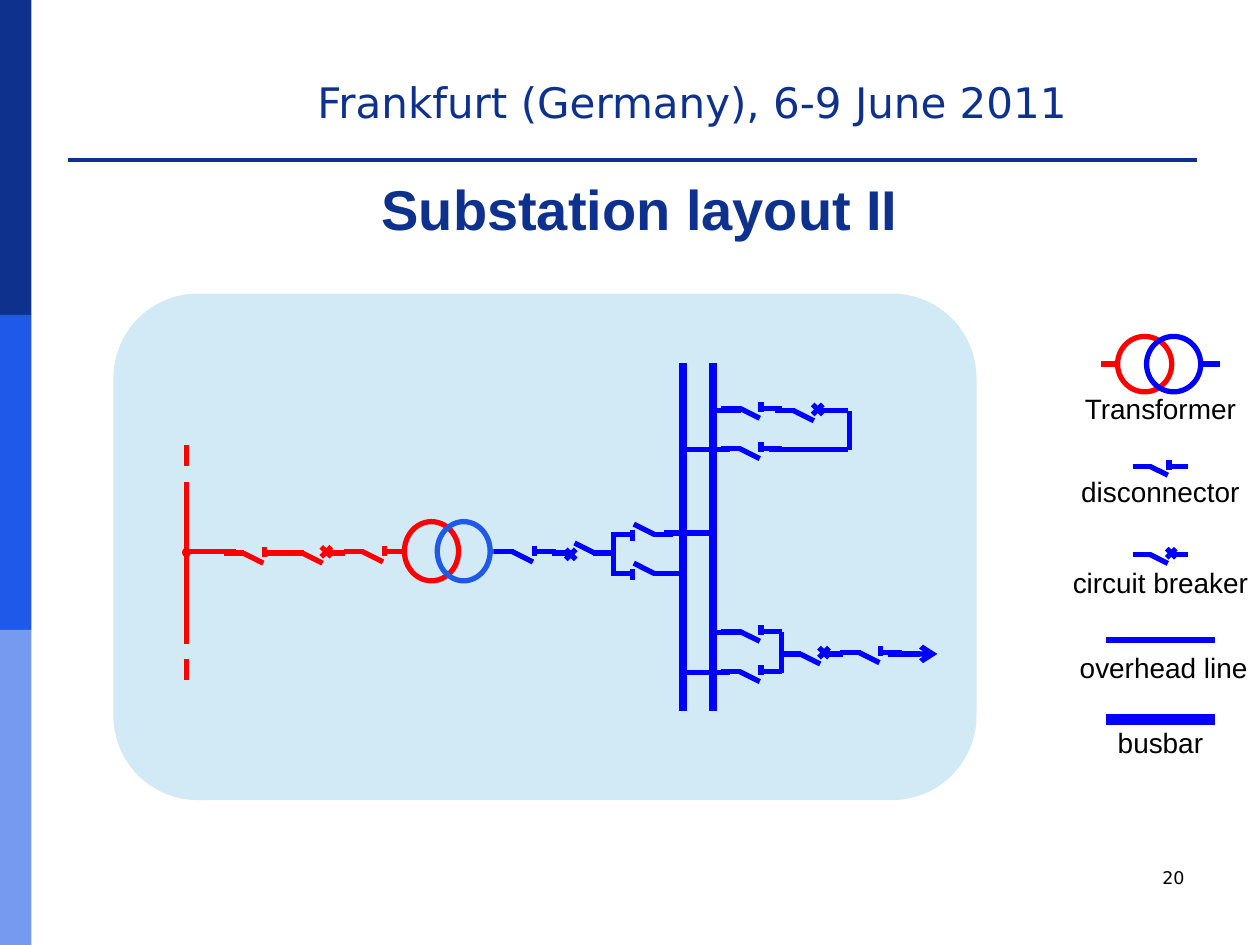
"""Build the substation layout slide with its single-line diagram and legend."""
from dataclasses import dataclass
from typing import NamedTuple

from lxml import etree
from pptx import Presentation
from pptx.dml.color import RGBColor
from pptx.enum.dml import MSO_LINE
from pptx.enum.shapes import MSO_CONNECTOR, MSO_SHAPE
from pptx.enum.text import MSO_AUTO_SIZE, PP_ALIGN
from pptx.oxml.ns import qn
from pptx.util import Inches, Pt

STRAIGHT, DASH, FIT_SHAPE = MSO_CONNECTOR.STRAIGHT, MSO_LINE.DASH, MSO_AUTO_SIZE.SHAPE_TO_FIT_TEXT
RECTANGLE, ROUNDED, OVAL = MSO_SHAPE.RECTANGLE, MSO_SHAPE.ROUNDED_RECTANGLE, MSO_SHAPE.OVAL
LEFT, CENTER, RIGHT = PP_ALIGN.LEFT, PP_ALIGN.CENTER, PP_ALIGN.RIGHT


@dataclass(frozen=True)
class Theme:
    navy: str = "0E318D"
    royal: str = "1F59E9"
    sky: str = "779AF1"
    deep: str = "154BD1"
    panel: str = "B4DCF0"
    high: str = "FF0000"
    low: str = "0000FF"
    ink: str = "000000"
    body_font: str = "Arial"
    header_font: str = "DejaVu Sans"
    title_size: int = 32
    header_size: int = 24
    label_size: int = 16
    number_size: int = 10
    wire: float = 3
    busbar: float = 4.5


THEME = Theme()


class Wire(NamedTuple):
    x1: float
    y1: float
    x2: float
    y2: float
    color: str = THEME.low
    width: float = THEME.wire
    dashed: bool = False
    arrow: bool = False


class Switch(NamedTuple):
    x: float
    y: float
    breaker: bool = False
    color: str = THEME.low
    scale: float = 1


class Ring(NamedTuple):
    left: float
    top: float
    width: float
    height: float
    color: str
    line_width: float = THEME.wire
    fill: str = ""


class Label(NamedTuple):
    text: str
    left: float
    top: float
    width: float
    height: float = 0.27
    size: int = THEME.label_size
    font: str = THEME.body_font
    color: str = THEME.ink
    align: PP_ALIGN = CENTER
    margin: float = 0


BUSBARS = [Wire(x, 5.64, x, 2.88, width=THEME.busbar) for x in (5.42, 5.66)]
OVERHEAD_LINE = [
    Wire(1.48, 5.01, 1.48, 3.91, THEME.high), Wire(1.48, 4.38, 1.87, 4.38, THEME.high),
    Wire(1.48, 5.4, 1.48, 4.85, THEME.high, dashed=True),
    Wire(1.48, 3.99, 1.48, 3.44, THEME.high, dashed=True)]
COUPLER = [
    Wire(5.64, 3.26, 5.88, 3.26), Wire(5.39, 3.57, 5.79, 3.57), Wire(6.57, 3.26, 6.73, 3.26),
    Wire(6.1, 3.57, 6.73, 3.57), Wire(6.74, 3.57, 6.74, 3.26)]
TRANSFORMER_LEADS = [
    Wire(3.14, 4.38, 3.21, 4.38, THEME.deep), Wire(3.9, 4.38, 4, 4.38, THEME.royal)]
INCOMING_BAY = [
    Wire(5.43, 4.55, 5.19, 4.55), Wire(5.66, 4.23, 5.27, 4.23), Wire(4.87, 4.23, 4.87, 4.55)]
OUTGOING_BAY = [
    Wire(5.64, 5.02, 5.88, 5.02), Wire(5.4, 5.34, 5.79, 5.34),
    Wire(6.2, 5.34, 6.2, 5.02), Wire(7.05, 5.19, 7.44, 5.19, arrow=True)]
LEGEND_WIRES = [
    Wire(8.89, 2.89, 8.74, 2.89, THEME.high), Wire(9.68, 2.89, 9.53, 2.89),
    Wire(9.64, 5.08, 8.78, 5.08), Wire(9.64, 5.71, 8.78, 5.71, width=6)]
SWITCHES = [
    Switch(1.78, 4.39, color=THEME.high), Switch(2.25, 4.39, True, THEME.high),
    Switch(2.73, 4.38, color=THEME.high), Switch(3.92, 4.38), Switch(4.87, 4.39, True, scale=-1),
    Switch(5.34, 4.24, scale=-1), Switch(5.34, 4.55, scale=-1),
    Switch(5.72, 3.24), Switch(6.15, 3.26, True), Switch(5.72, 3.56),
    Switch(5.72, 5.01), Switch(5.72, 5.33), Switch(6.2, 5.19, True), Switch(6.67, 5.18),
    Switch(8.99, 3.7, scale=0.9), Switch(8.99, 4.4, True, scale=0.9)]
RINGS = [
    Ring(3.21, 4.14, 0.43, 0.47, THEME.high), Ring(3.47, 4.14, 0.42, 0.47, THEME.royal),
    Ring(1.46, 4.36, 0.04, 0.05, THEME.high, 2, THEME.deep),
    Ring(8.87, 2.67, 0.43, 0.44, THEME.high), Ring(9.1, 2.67, 0.43, 0.44, THEME.low)]
LABELS = [
    Label("Frankfurt (Germany), 6-9 June 2011", 2.42, 0.56, 6.58, 0.5, THEME.header_size,
          THEME.header_font, THEME.navy, LEFT, 0.1),
    Label("Transformer", 8.6, 3.11, 1.22), Label("disconnector", 8.56, 3.77, 1.3),
    Label("circuit breaker", 8.5, 4.49, 1.42), Label("overhead line", 8.47, 5.16, 1.53),
    Label("busbar", 8.64, 5.76, 1.14),
    Label("20", 7.17, 6.83, 2.33, 0.5, THEME.number_size, THEME.header_font, THEME.ink, RIGHT, 0.1)]


def draw_wire(slide, wire: Wire) -> None:
    connector = slide.shapes.add_connector(STRAIGHT, *map(Inches, wire[:4]))
    connector.line.color.rgb = RGBColor.from_string(wire.color)
    connector.line.width = Pt(wire.width)
    if wire.dashed:
        connector.line.dash_style = DASH
    if wire.arrow:
        etree.SubElement(connector._element.spPr.find(qn("a:ln")), qn("a:tailEnd"), type="arrow")
    etree.SubElement(connector._element.spPr, qn("a:effectLst"))


def draw_switch(slide, switch: Switch) -> None:
    contact = ([(0.3, 0.03, 0.38, -0.05), (0.3, -0.05, 0.38, 0.03)] if switch.breaker
               else [(0.32, -0.05, 0.32, 0.03)])
    for x1, y1, x2, y2 in [(0, 0, 0.16, 0), (0.15, 0, 0.31, 0.08), (0.33, 0, 0.49, 0)] + contact:
        draw_wire(slide, Wire(switch.x + switch.scale * x1, switch.y + switch.scale * y1,
                              switch.x + switch.scale * x2, switch.y + switch.scale * y2,
                              switch.color))


def draw_block(slide, preset: MSO_SHAPE, place: tuple, fill: str):
    block = slide.shapes.add_shape(preset, *map(Inches, place))
    block.shadow.inherit = False
    block.line.fill.background()
    block.fill.background()
    if fill:
        block.fill.solid()
        block.fill.fore_color.rgb = RGBColor.from_string(fill)
    return block


def draw_ring(slide, ring: Ring) -> None:
    circle = draw_block(slide, OVAL, ring[:4], ring.fill)
    circle.line.color.rgb = RGBColor.from_string(ring.color)
    circle.line.width = Pt(ring.line_width)


def draw_header_rule(slide) -> None:
    table = slide.shapes.add_table(1, 1, *map(Inches, (0.54, 1.07, 8.96, 0.2))).table
    table.first_row = table.horz_banding = False
    cell = table.cell(0, 0)
    cell.margin_top = cell.margin_bottom = 0
    etree.SubElement(cell.text_frame.paragraphs[0]._p, qn("a:endParaRPr"), sz="800")
    borders = cell._tc.get_or_add_tcPr()
    for side in ("lnL", "lnR", "lnT"):
        etree.SubElement(etree.SubElement(borders, qn(f"a:{side}")), qn("a:noFill"))
    bottom = etree.SubElement(borders, qn("a:lnB"), w=str(Pt(2.25)))
    etree.SubElement(etree.SubElement(bottom, qn("a:solidFill")), qn("a:srgbClr"), val=THEME.navy)
    cell.fill.background()


def write(paragraph, text: str, size: int, font: str, color: str, bold: bool = False) -> None:
    run = paragraph.add_run()
    run.text = text
    run.font.size, run.font.name, run.font.bold = Pt(size), font, bold
    run.font.color.rgb = RGBColor.from_string(color)


def draw_label(slide, label: Label) -> None:
    frame = slide.shapes.add_textbox(*map(Inches, label[1:5])).text_frame
    frame.word_wrap = True
    frame.margin_left = frame.margin_right = Inches(label.margin)
    frame.margin_top = frame.margin_bottom = Inches(label.margin / 2)
    frame.paragraphs[0].alignment = label.align
    write(frame.paragraphs[0], label.text, label.size, label.font, label.color)


def draw_title(slide, text: str) -> None:
    title = slide.shapes.title
    title.left, title.top, title.width, title.height = map(Inches, (0.59, 1.39, 8.98, 0.59))
    title.text_frame.auto_size = FIT_SHAPE
    heading = title.text_frame.paragraphs[0]
    heading.alignment, heading.line_spacing = CENTER, 0.9
    write(heading, text, THEME.title_size, THEME.body_font, THEME.navy, True)


def main() -> None:
    deck = Presentation()
    deck.slide_width, deck.slide_height = Inches(10), Inches(7.5)
    slide = deck.slides.add_slide(deck.slide_layouts[5])
    for row, color in enumerate((THEME.navy, THEME.royal, THEME.sky)):
        draw_block(slide, RECTANGLE, (0, 2.5 * row, 0.25, 2.5), color)
    draw_header_rule(slide)
    draw_title(slide, "Substation layout II")
    panel = draw_block(slide, ROUNDED, (0.9, 2.33, 6.85, 4.02), THEME.panel)
    etree.SubElement(panel._element.spPr.find(qn("a:solidFill"))[0], qn("a:alpha"), val="59000")
    diagram = BUSBARS + OVERHEAD_LINE + COUPLER + TRANSFORMER_LEADS + INCOMING_BAY + OUTGOING_BAY
    for draw, parts in ((draw_ring, RINGS), (draw_wire, diagram + LEGEND_WIRES),
                        (draw_switch, SWITCHES), (draw_label, LABELS)):
        for part in parts:
            draw(slide, part)
    deck.save("out.pptx")


if __name__ == "__main__":
    main()
